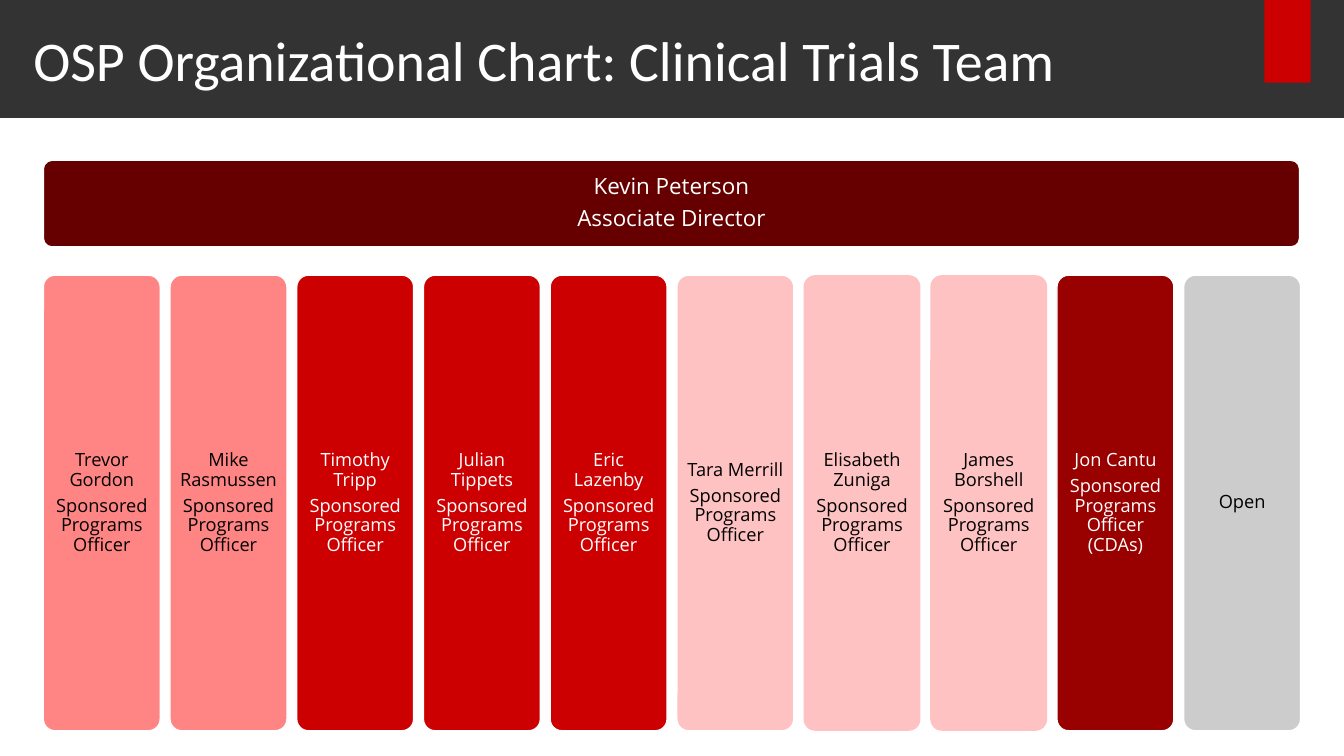
from dataclasses import dataclass

from pptx import Presentation
from pptx import util as u
from pptx.dml.color import RGBColor
from pptx.enum import shapes, text


@dataclass(frozen=True)
class Theme:
    white: str = "FFFFFF"
    black: str = "000000"
    charcoal: str = "333333"
    red: str = "CC0000"
    dark_red: str = "990000"
    maroon: str = "660000"
    salmon: str = "FF8585"
    pink: str = "FFC2C2"
    gray: str = "CCCCCC"
    title_font: str = "Calibri"
    body_font: str = "Open Sans"
    title_size: int = 40
    director_size: int = 16
    officer_size: int = 13


class OrgChart:
    def __init__(self, slide, theme):
        self.slide = slide
        self.theme = theme

    def block(self, kind, left, top, width, height, fill, outline=None):
        block = self.slide.shapes.add_shape(
            kind, u.Inches(left), u.Inches(top), u.Inches(width), u.Inches(height))
        block.shadow.inherit = False
        block.fill.solid()
        block.fill.fore_color.rgb = RGBColor.from_string(fill)
        if outline:
            block.line.color.rgb = RGBColor.from_string(outline)
            block.line.width = u.Pt(1)
        else:
            block.line.fill.background()
        return block

    def band(self, left, top, width, height, fill):
        self.block(shapes.MSO_SHAPE.RECTANGLE, left, top, width, height, fill)

    def fill_text(self, frame, lines, font, size, color, inset):
        frame.word_wrap = True
        frame.vertical_anchor = text.MSO_ANCHOR.MIDDLE
        frame.margin_left = frame.margin_right = u.Inches(inset)
        frame.margin_top = frame.margin_bottom = u.Inches(inset)
        frame.text = "\n".join(lines)
        for paragraph in frame.paragraphs:
            paragraph.font.name = font
            paragraph.font.size = u.Pt(size)
            paragraph.font.color.rgb = RGBColor.from_string(color)

    def title(self, wording, left, top, width, height):
        title = self.slide.shapes.title
        title.left, title.top = u.Inches(left), u.Inches(top)
        title.width, title.height = u.Inches(width), u.Inches(height)
        self.fill_text(title.text_frame, [wording], self.theme.title_font,
                       self.theme.title_size, self.theme.white, 0)
        title.text_frame.auto_size = text.MSO_AUTO_SIZE.NONE
        title.text_frame.paragraphs[0].alignment = text.PP_ALIGN.LEFT
        title.element.getparent().append(title.element)

    def card(self, left, top, width, height, lines, size, fill, color, inset, outline):
        card = self.block(shapes.MSO_SHAPE.ROUNDED_RECTANGLE,
                          left, top, width, height, fill, outline)
        card.adjustments[0] = 0.1
        frame = card.text_frame
        self.fill_text(frame, lines, self.theme.body_font, size, color, inset)
        frame.auto_size = text.MSO_AUTO_SIZE.TEXT_TO_FIT_SHAPE
        for paragraph in frame.paragraphs:
            paragraph.alignment = text.PP_ALIGN.CENTER
            paragraph.line_spacing = 0.9
            paragraph.space_after = u.Pt(size * 0.35)


def main():
    theme = Theme()
    deck = Presentation()
    deck.slide_width, deck.slide_height = u.Inches(13.33), u.Inches(7.5)
    chart = OrgChart(deck.slides.add_slide(deck.slide_layouts[5]), theme)

    chart.band(0, 0, 13.33, 1.17, theme.charcoal)
    chart.band(12.54, 0, 0.46, 0.82, theme.red)
    chart.title("OSP Organizational Chart: Clinical Trials Team", 0.33, 0.2, 11.96, 0.77)

    chart.card(0.43, 1.59, 12.46, 0.86, ["Kevin Peterson", "Associate Director"],
               theme.director_size, theme.maroon, theme.white, 0.07, theme.white)

    role = "Sponsored Programs Officer"
    officers = [
        (["Trevor Gordon", role], theme.salmon, theme.black, theme.white),
        (["Mike Rasmussen", role], theme.salmon, theme.black, theme.white),
        (["Timothy Tripp", role], theme.red, theme.white, theme.white),
        (["Julian Tippets", role], theme.red, theme.white, theme.white),
        (["Eric Lazenby", role], theme.red, theme.white, theme.white),
        (["Tara Merrill", role], theme.pink, theme.black, theme.white),
        (["Elisabeth Zuniga", role], theme.pink, theme.black, None),
        (["James Borshell", role], theme.pink, theme.black, None),
        (["Jon Cantu", f"{role} (CDAs)"], theme.dark_red, theme.white, theme.white),
        (["Open"], theme.gray, theme.black, theme.white),
    ]
    first_left, last_left = 0.43, 11.74
    pitch = (last_left - first_left) / (len(officers) - 1)
    for column, (lines, fill, color, outline) in enumerate(officers):
        chart.card(first_left + column * pitch, 2.73, 1.16, 4.52, lines,
                   theme.officer_size, fill, color, 0.05, outline)

    deck.save("out.pptx")


if __name__ == "__main__":
    main()
